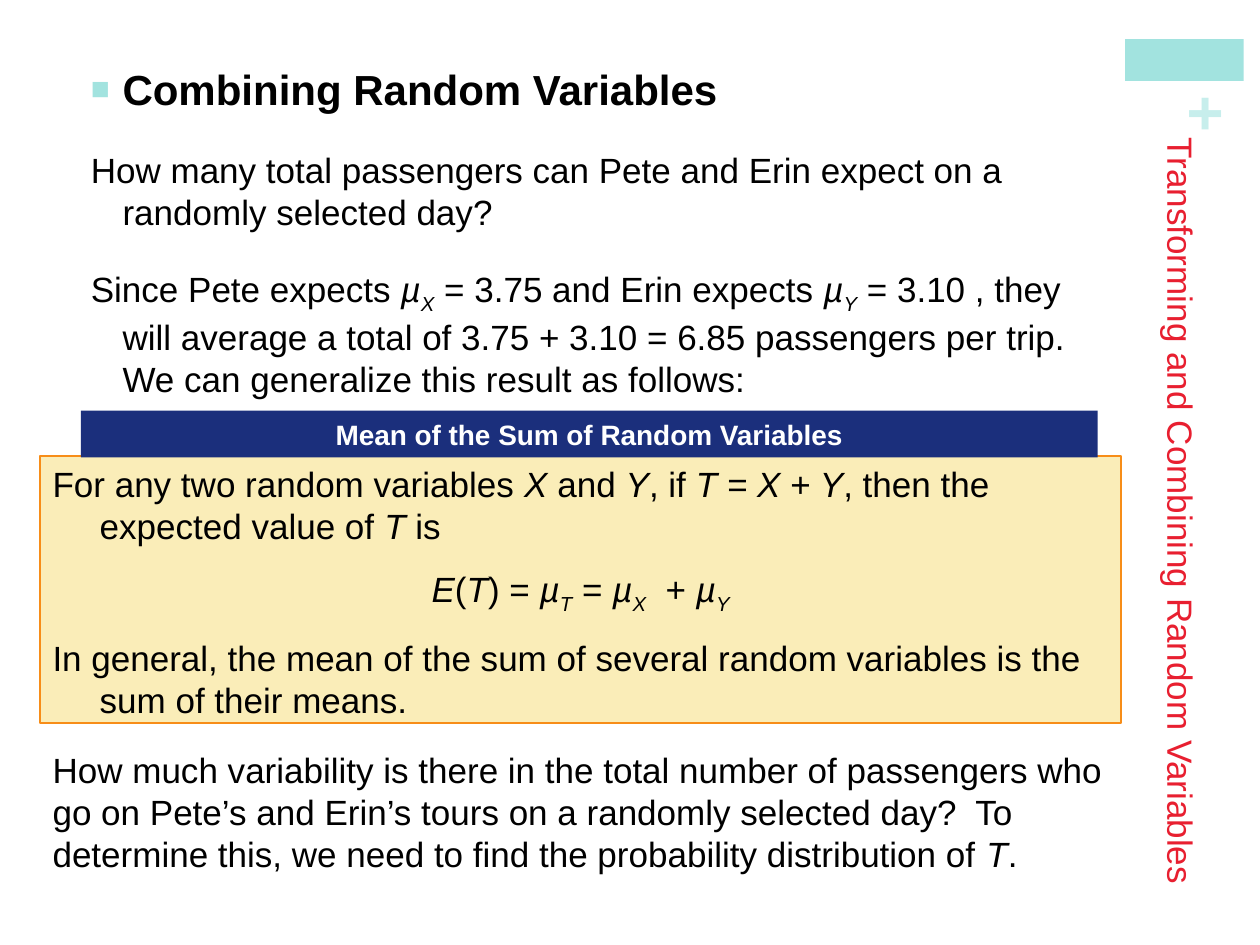
from pptx import Presentation
from pptx.dml.color import RGBColor
from pptx.enum.shapes import MSO_SHAPE
from pptx.enum.text import MSO_ANCHOR, MSO_AUTO_SIZE, PP_ALIGN
from pptx.util import Cm, Pt
from lxml.etree import SubElement
from pptx.oxml.ns import qn

HUES = {"aqua": "A2E3DF", "pale": "C7EEEC", "black": "000000", "red": "E81F30",
        "cream": "FAEDB8", "orange": "F78D18", "navy": "1B2F7C", "white": "FFFFFF"}


class Deck:
    font = "Arial"

    def __init__(self):
        self.prs = Presentation()
        self.prs.slide_width, self.prs.slide_height = Cm(25.4), Cm(19.05)
        self.slide = self.prs.slides.add_slide(self.prs.slide_layouts[10])

    def hue(self, name):
        return RGBColor.from_string(HUES[name])

    def place(self, shape, at):
        shape.left, shape.top, shape.width, shape.height = map(Cm, at)
        return shape

    def frame(self, shape, pad=(0.25, 0.13), anchor=MSO_ANCHOR.TOP):
        frame = shape.text_frame
        frame.word_wrap = True
        frame.auto_size = MSO_AUTO_SIZE.NONE
        frame.vertical_anchor = anchor
        frame.margin_left = frame.margin_right = Cm(pad[0])
        frame.margin_top = frame.margin_bottom = Cm(pad[1])
        return frame

    def para(self, frame, runs, size=20, color="black", bold=False, align=PP_ALIGN.LEFT,
             hang=0, before=0, after=0, bullet=None):
        para = frame.paragraphs[0]
        if para.runs:
            para = frame.add_paragraph()
        para.alignment = align
        para.space_before, para.space_after = Pt(before), Pt(after)
        props = para._p.get_or_add_pPr()
        props.set("marL", str(Cm(hang)))
        props.set("indent", str(-Cm(hang)))
        if bullet:
            tint = SubElement(props, qn("a:buClr"))
            SubElement(tint, qn("a:srgbClr"), val=HUES["aqua"])
            SubElement(props, qn("a:buSzPct"), val="75000")
            SubElement(props, qn("a:buChar"), char=bullet)
        else:
            SubElement(props, qn("a:buNone"))
        for text, mark in runs:
            run = para.add_run()
            run.text = text
            font = run.font
            font.name, font.size, font.bold = self.font, Pt(size), bold
            font.italic = mark != ""
            font.color.rgb = self.hue(color)
            if mark == "sub":
                run._r.get_or_add_rPr().set("baseline", "-25000")

    def rect(self, at, fill, line=None):
        shape = self.slide.shapes.add_shape(MSO_SHAPE.RECTANGLE, *map(Cm, at))
        shape.shadow.inherit = False
        shape.fill.solid()
        shape.fill.fore_color.rgb = self.hue(fill)
        if line:
            shape.line.color.rgb = self.hue(line)
            shape.line.width = Pt(1)
        else:
            shape.line.fill.background()
        return shape

    def label(self, at, turn=0, **style):
        shape = self.slide.shapes.add_textbox(*map(Cm, at))
        shape.rotation = turn
        return self.frame(shape, **style)

    def title(self, at, text, **style):
        shape = self.place(self.slide.shapes.title, at)
        self.para(self.frame(shape), [(text, "")], **style)

    def body(self, at):
        shape = self.place(self.slide.placeholders[1], at)
        frame = self.frame(shape, pad=(0.13, 0.25))
        frame._txBody.bodyPr.set("vert", "horz")
        return frame


def main():
    deck = Deck()
    deck.rect((22.68, 0.79, 2.39, 0.84), "aqua")
    plus = deck.label((23.88, 1.55, 0.71, 1.55), turn=270, pad=(0, 0))
    deck.para(plus, [("+", "")], size=36, color="pale", bold=True)

    deck.title((22.61, 2.64, 1.88, 16.41),
               "Transforming and Combining Random Variables", color="red")

    body = deck.body((1.7, 1.02, 20.5, 7.14))
    style = {"hang": 0.64, "before": 20}
    deck.para(body, [("Combining Random Variables", "")], size=24, bold=True,
              bullet="■", **style)
    deck.para(body, [("How many total passengers can Pete and Erin expect on a "
                      "randomly selected day?", "")], **style)
    deck.para(body, [
        ("Since Pete expects ", ""), ("µ", "it"), ("X", "sub"),
        (" = 3.75 and Erin expects ", ""), ("µ", "it"), ("Y", "sub"),
        (" = 3.10 , they will average a total of 3.75 + 3.10 = 6.85 passengers per trip. "
         "We can generalize this result as follows:", "")], **style)

    rule = deck.frame(deck.rect((0.81, 9.19, 21.79, 5.38), "cream", "orange"))
    style = {"hang": 0.95, "after": 12}
    deck.para(rule, [
        ("For any two random variables ", ""), ("X", "it"), (" and ", ""), ("Y", "it"),
        (", if ", ""), ("T = X ", "it"), ("+", ""), (" Y", "it"),
        (", then the expected value of ", ""), ("T", "it"), (" is", "")], **style)
    deck.para(rule, [
        ("E", "it"), ("(", ""), ("T", "it"), (") = ", ""), ("µ", "it"), ("T", "sub"),
        (" = ", ""), ("µ", "it"), ("X", "sub"), ("  + ", ""), ("µ", "it"), ("Y", "sub")],
        align=PP_ALIGN.CENTER, **style)
    deck.para(rule, [("In general, the mean of the sum of several random variables is "
                      "the sum of their means.", "")], **style)

    head = deck.frame(deck.rect((1.63, 8.28, 20.5, 0.94), "navy"), anchor=MSO_ANCHOR.MIDDLE)
    deck.para(head, [("Mean of the Sum of Random Variables", "")], size=16,
              color="white", bold=True, align=PP_ALIGN.CENTER)

    close = deck.label((0.81, 14.96, 21.79, 2.82))
    deck.para(close, [
        ("How much variability is there in the total number of passengers who go on "
         "Pete’s and Erin’s tours on a randomly selected day?  To determine this, we "
         "need to find the probability distribution of ", ""), ("T", "it"), (".", "")])

    deck.prs.save("out.pptx")


if __name__ == "__main__":
    main()
